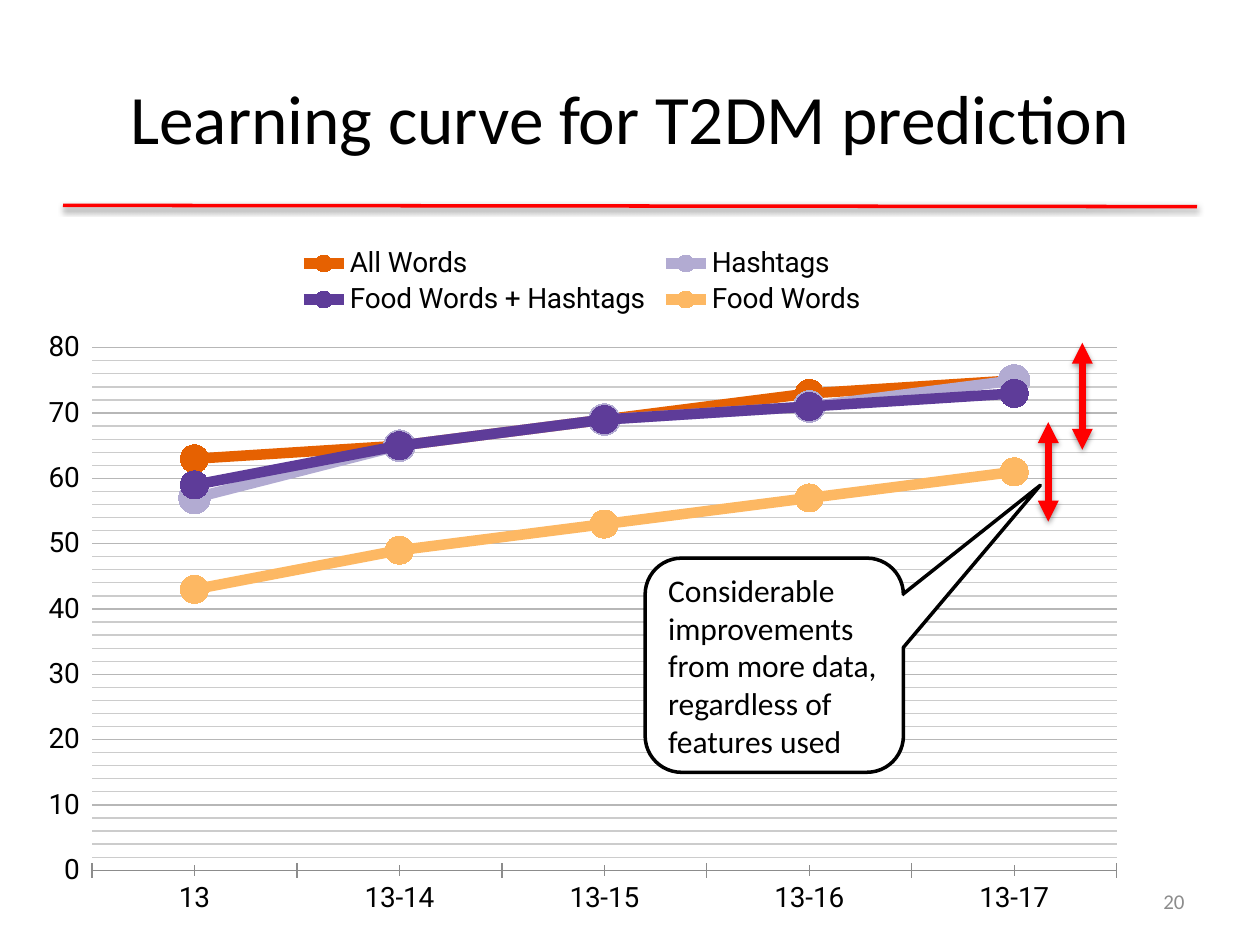
from dataclasses import dataclass

from lxml import etree
from pptx import Presentation
from pptx.chart.data import CategoryChartData as ChartData
from pptx.dml.color import RGBColor as RGB
from pptx.enum.chart import XL_CHART_TYPE as Kind
from pptx.enum.chart import XL_LEGEND_POSITION as Spot
from pptx.enum.chart import XL_MARKER_STYLE as Mark
from pptx.enum.chart import XL_TICK_MARK as Tick
from pptx.enum.shapes import MSO_CONNECTOR as Conn
from pptx.enum.shapes import MSO_SHAPE as Shape
from pptx.enum.text import MSO_ANCHOR as Anchor
from pptx.enum.text import PP_ALIGN as Align
from pptx.oxml import parse_xml
from pptx.oxml.ns import nsdecls, qn
from pptx.util import Inches, Pt


@dataclass(frozen=True)
class Theme:
    body: str = "Calibri"
    chart: str = "Roboto"
    black: str = "000000"
    white: str = "FFFFFF"
    red: str = "FF0000"
    gray: str = "8C8C8C"
    grid: str = "B7B7B7"
    minor: str = "CCCCCC"
    title_size: float = 39.6
    note_size: float = 18
    axis_size: float = 16
    page_size: float = 12


THEME = Theme()
YEARS = ["13", "13-14", "13-15", "13-16", "13-17"]
# Name, values, colour, marker size
CURVES = [
    ("All Words", (63, 65, 69, 73, 75), "E66101", 16),
    ("Hashtags", (57, 65, 69, 71, 75), "B2ABD2", 18),
    ("Food Words + Hashtags", (59, 65, 69, 71, 73), "5E3C99", 16),
    ("Food Words", (43, 49, 53, 57, 61), "FDB863", 16),
]


def style(font, face, size, color):
    font.name, font.size = face, Pt(size)
    font.color.rgb = RGB.from_string(color)


def ink(line, color, width):
    line.color.rgb = RGB.from_string(color)
    line.width = Pt(width)


def write(shape, text, size, color=THEME.black, align=Align.LEFT):
    frame = shape.text_frame
    frame.word_wrap = True
    frame.vertical_anchor = Anchor.MIDDLE
    para = frame.paragraphs[0]
    para.text, para.alignment = text, align
    style(para.font, THEME.body, size, color)


def add_text(slide, box, *args):
    write(slide.shapes.add_textbox(*map(Inches, box)), *args)


def add_line(slide, start, end, width, heads=False):
    """Draw a red line with a soft shadow below it."""
    line = slide.shapes.add_connector(Conn.STRAIGHT, *map(Inches, start + end))
    ink(line.line, THEME.red, width)
    props = line._element.spPr
    if heads:
        for tag in ("a:headEnd", "a:tailEnd"):
            etree.SubElement(props.find(qn("a:ln")), qn(tag), type="triangle")
    props.append(parse_xml(
        f'<a:effectLst {nsdecls("a")}><a:outerShdw blurRad="{Pt(3.1)}" '
        f'dist="{Pt(1.6)}" dir="5400000" rotWithShape="0">'
        f'<a:srgbClr val="{THEME.black}"><a:alpha val="38000"/></a:srgbClr>'
        '</a:outerShdw></a:effectLst>'))


def set_layout(parent, index, box, inner=False):
    """Fix a chart part at fractions of the chart frame."""
    for old in parent.findall(qn("c:layout")):
        parent.remove(old)
    layout = etree.Element(qn("c:layout"))
    manual = etree.SubElement(layout, qn("c:manualLayout"))
    pairs = [("layoutTarget", "inner")] if inner else []
    pairs += [("xMode", "edge"), ("yMode", "edge"), *zip("xywh", box)]
    for tag, val in pairs:
        etree.SubElement(manual, qn(f"c:{tag}"), val=str(val))
    parent.insert(index, layout)


def add_header(slide, box):
    left, top, width, height = box
    add_text(slide, box, "Learning curve for T2DM prediction",
             THEME.title_size, THEME.black, Align.CENTER)
    rule = top + height + 0.08
    add_line(slide, (left, rule), (left + width, rule + 0.01), 2)


def add_curves(slide, box):
    data = ChartData()
    data.categories = YEARS
    for name, vals, *_ in CURVES:
        data.add_series(name, vals)
    chart = slide.shapes.add_chart(
        Kind.LINE_MARKERS, *map(Inches, box), data).chart
    style(chart.font, THEME.chart, THEME.axis_size, THEME.black)
    chart.has_title = False

    # Legend and plot area
    chart.has_legend = True
    legend = chart.legend
    legend.position, legend.include_in_layout = Spot.TOP, False
    style(legend.font, THEME.chart, THEME.axis_size, THEME.black)
    set_layout(legend._element, 1, (0.24, 0.02, 0.52, 0.11))
    area = chart._chartSpace.chart.plotArea
    set_layout(area, 0, (0.06, 0.17, 0.92, 0.75), inner=True)

    # Axes
    years, score = chart.category_axis, chart.value_axis
    for axis in (years, score):
        axis.major_tick_mark = axis.minor_tick_mark = Tick.CROSS
        style(axis.tick_labels.font, THEME.chart, THEME.axis_size, THEME.black)
    ink(years.format.line, THEME.gray, 0.75)
    score.format.line.fill.background()
    score.minimum_scale, score.maximum_scale = 0, 80
    score.major_unit, score.minor_unit = 10, 2
    score.has_major_gridlines = score.has_minor_gridlines = True
    ink(score.major_gridlines.format.line, THEME.grid, 0.75)
    score._element.find(qn("c:minorGridlines")).append(parse_xml(
        f'<c:spPr {nsdecls("c", "a")}><a:ln w="{Pt(0.75)}"><a:solidFill>'
        f'<a:srgbClr val="{THEME.minor}"/></a:solidFill></a:ln></c:spPr>'))

    # Curves
    chart.plots[0].vary_by_categories = False
    for curve, (_, _, color, size) in zip(chart.plots[0].series, CURVES):
        curve.smooth = False
        ink(curve.format.line, color, 6)
        mark = curve.marker
        mark.style, mark.size = Mark.CIRCLE, size
        mark.format.fill.solid()
        mark.format.fill.fore_color.rgb = RGB.from_string(color)
        ink(mark.format.line, color, 0.75)


def add_gains(slide, box):
    """Place the two gain arrows and their callout."""
    left, top, width, height = box
    right, base = left + width, top + height
    for back, start, end in ((0.27, 0.63, 1.42), (0, 0, 0.85)):
        add_line(slide, (right - back, top + start),
                 (right - back, top + end), 4, heads=True)
    note = slide.shapes.add_shape(
        Shape.ROUNDED_RECTANGULAR_CALLOUT,
        *map(Inches, (left, base - 1.7, 2.05, 1.7)))
    for i, val in enumerate((1.03, -0.84, 0.17)):
        note.adjustments[i] = val
    note.shadow.inherit = False
    note.fill.solid()
    note.fill.fore_color.rgb = RGB.from_string(THEME.white)
    ink(note.line, THEME.black, 2)
    write(note, "Considerable improvements from more data, "
          "regardless of features used", THEME.note_size)


def main():
    deck = Presentation()
    deck.slide_width, deck.slide_height = Inches(10), Inches(7.5)
    slide = deck.slides.add_slide(deck.slide_layouts[6])
    add_header(slide, (0.5, 0.3, 9, 1.25))
    add_curves(slide, (0.2, 1.82, 8.84, 5.53))
    add_text(slide, (7.17, 6.95, 2.33, 0.4), "20",
             THEME.page_size, THEME.gray, Align.RIGHT)
    add_gains(slide, (5.12, 2.72, 3.47, 3.41))
    deck.save("out.pptx")


if __name__ == "__main__":
    main()
